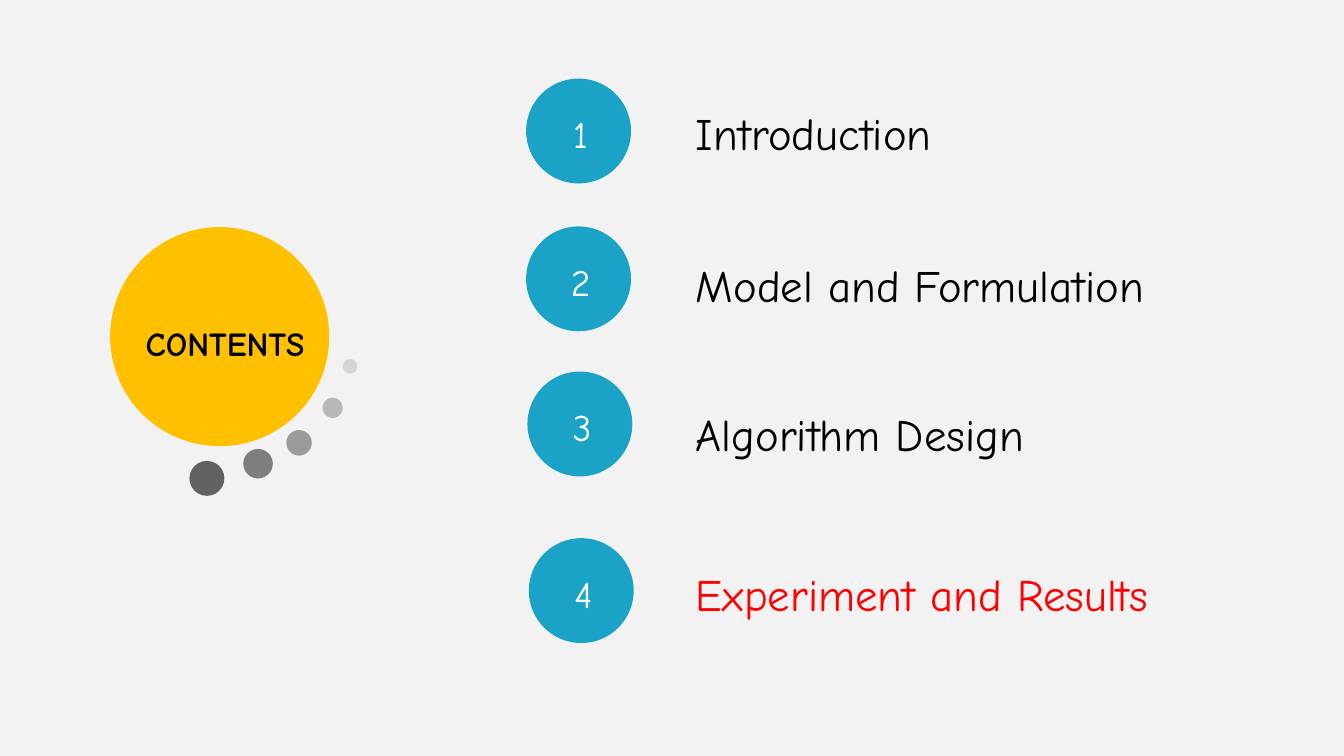
from dataclasses import dataclass

from lxml import etree
from pptx import Presentation
from pptx.dml.color import RGBColor
from pptx.enum import shapes, text
from pptx.oxml.ns import qn
from pptx.util import Inches, Pt

FONT = "Comic Neue"
BLUE, YELLOW, GRAY = "1AA3C7", "FFC000", "616161"
BLACK, WHITE, RED = "000000", "FFFFFF", "FF0000"


@dataclass
class Entry:
    number: int
    label: str
    circle_left: float
    circle_top: float
    label_top: float
    label_width: float
    color: str = BLACK


@dataclass
class Dot:
    left: float
    top: float
    size: float
    opacity: int


ENTRIES = [
    Entry(1, "Introduction", 3.92, 0.59, 0.74, 3.23),
    Entry(2, "Model and Formulation", 3.92, 1.69, 1.87, 4.39),
    Entry(3, "Algorithm Design", 3.93, 2.77, 2.98, 3.97),
    Entry(4, "Experiment and Results", 3.94, 4.01, 4.17, 4.29, RED),
]
DOTS = [
    Dot(1.41, 3.43, 0.26, 100),
    Dot(1.81, 3.34, 0.22, 80),
    Dot(2.13, 3.2, 0.19, 60),
    Dot(2.4, 2.96, 0.15, 40),
    Dot(2.55, 2.67, 0.11, 20),
]


def paint(fill, color: str, opacity: int = 100) -> None:
    fill.solid()
    fill.fore_color.rgb = RGBColor.from_string(color)
    if opacity < 100:
        color_node = fill._xPr.find(qn("a:solidFill"))[0]
        etree.SubElement(color_node, qn("a:alpha"), val=str(opacity * 1000))


def write(box, words: str, *, size: int, color: str = BLACK, bold: bool = False,
          align=text.PP_ALIGN.LEFT, anchor=text.MSO_ANCHOR.TOP) -> None:
    frame = box.text_frame
    frame.word_wrap = True
    frame.auto_size = text.MSO_AUTO_SIZE.SHAPE_TO_FIT_TEXT
    frame.vertical_anchor = anchor
    para = frame.paragraphs[0]
    para.alignment = align
    span = para.add_run()
    span.text = words
    span.font.name = FONT
    span.font.size = Pt(size)
    span.font.bold = bold
    span.font.color.rgb = RGBColor.from_string(color)


def add_solid(parent, kind, left: float, top: float, width: float, height: float,
              color: str, opacity: int = 100):
    shape = parent.add_shape(kind, Inches(left), Inches(top), Inches(width), Inches(height))
    shape.shadow.inherit = False
    paint(shape.fill, color, opacity)
    shape.line.fill.background()
    return shape


def add_entry(page, entry: Entry) -> None:
    badge = page.shapes.add_group_shape().shapes
    circle = add_solid(badge, shapes.MSO_SHAPE.OVAL, entry.circle_left, entry.circle_top,
                       0.77, 0.77, BLUE)
    paint(circle.line.fill, BLUE)
    circle.line.width = Pt(0.75)
    plate = add_solid(badge, shapes.MSO_SHAPE.RECTANGLE, entry.circle_left + 0.16,
                      entry.circle_top + 0.19, 0.48, 0.44, BLUE)
    write(plate, str(entry.number), size=20, color=WHITE, align=text.PP_ALIGN.CENTER)
    label = page.shapes.add_textbox(Inches(5.08), Inches(entry.label_top),
                                    Inches(entry.label_width), Inches(0.5))
    write(label, entry.label, size=24, color=entry.color)


def main() -> None:
    # Widescreen page, 16:9
    deck = Presentation()
    deck.slide_width, deck.slide_height = Inches(10), Inches(10 * 9 / 16)
    page = deck.slides.add_slide(deck.slide_layouts[5])
    paint(page.background.fill, "F2F2F2")

    # Heading on its large circle
    disc = add_solid(page.shapes, shapes.MSO_SHAPE.OVAL, 0.82, 1.69, 1.63, 1.63, YELLOW)
    title = page.shapes.title
    title.left, title.top = Inches(0.64), Inches(2.35)
    title.width, title.height = Inches(2.07), Inches(0.4)
    write(title, "CONTENTS", size=18, bold=True, align=text.PP_ALIGN.CENTER)
    disc._element.addnext(title._element)  # bring the title in front of the disc

    # Trail of fading dots
    for dot in DOTS:
        add_solid(page.shapes, shapes.MSO_SHAPE.OVAL, dot.left, dot.top,
                  dot.size, dot.size, GRAY, dot.opacity)

    # Numbered agenda
    for entry in ENTRIES:
        add_entry(page, entry)

    deck.save("out.pptx")


if __name__ == "__main__":
    main()
